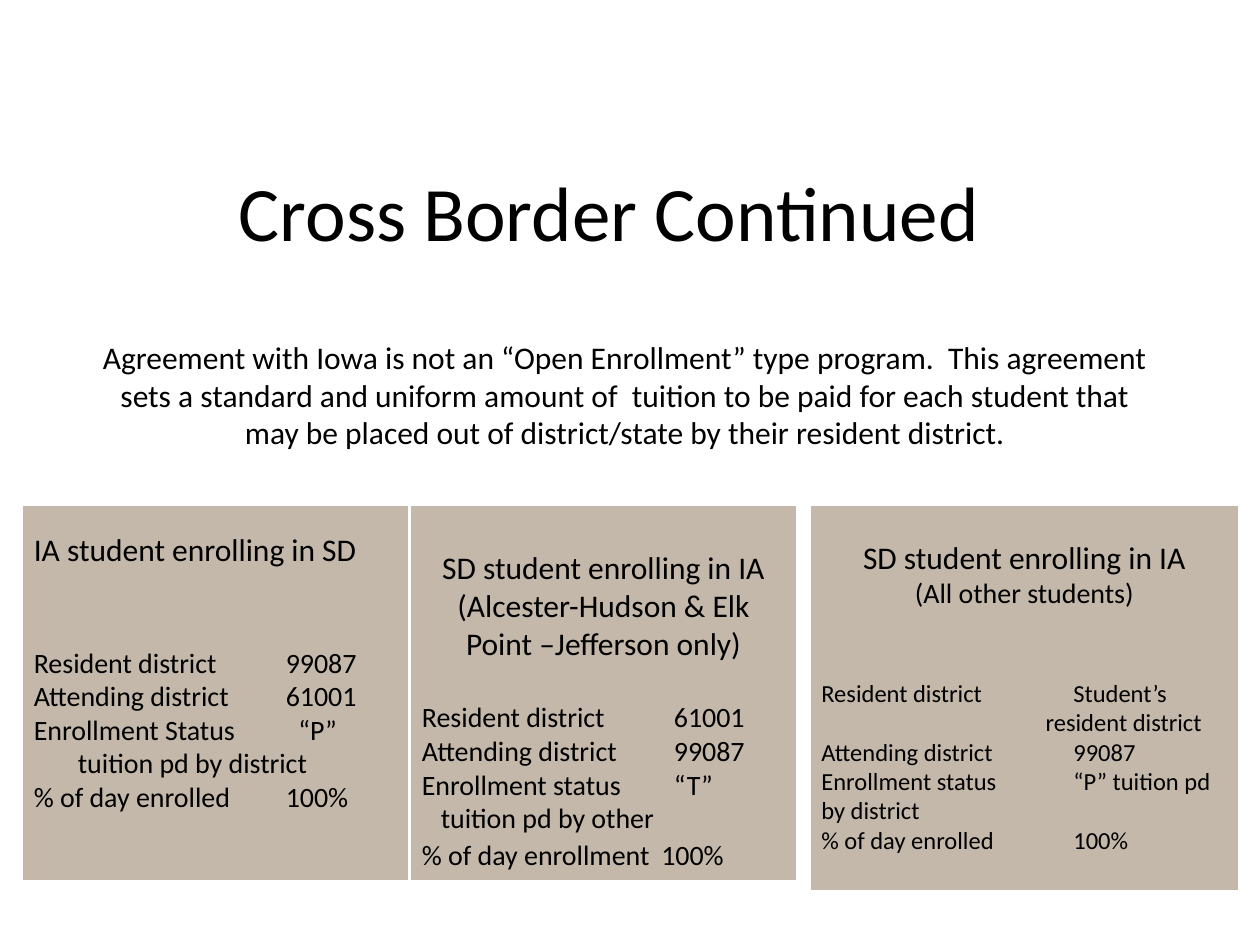
from dataclasses import dataclass

from lxml import etree
from pptx import Presentation
from pptx.dml.color import RGBColor
from pptx.enum import shapes, text
from pptx.oxml import ns
from pptx.util import Inches, Pt


@dataclass(frozen=True)
class Theme:
    font: str = "Calibri"
    ink: RGBColor = RGBColor(0x00, 0x00, 0x00)
    paper: RGBColor = RGBColor(0xFF, 0xFF, 0xFF)
    panel: RGBColor = RGBColor(0xC3, 0xB8, 0xA9)
    title: int = 44
    body: int = 18
    detail: int = 16
    small: int = 14
    border: int = 2


THEME = Theme()
CENTER = text.PP_ALIGN.CENTER
LEFT = text.PP_ALIGN.LEFT


def add_box(s, left, top, width, height, fill, margin_top=None):
    sp = s.shapes.add_shape(
        shapes.MSO_SHAPE.RECTANGLE,
        Inches(left), Inches(top), Inches(width), Inches(height),
    )
    sp.shadow.inherit = False
    sp.fill.solid()
    sp.fill.fore_color.rgb = fill
    sp.line.color.rgb = THEME.paper
    sp.line.width = Pt(THEME.border)
    tf = sp.text_frame
    tf.word_wrap = True
    tf.vertical_anchor = text.MSO_ANCHOR.MIDDLE
    if margin_top is not None:
        tf.vertical_anchor = text.MSO_ANCHOR.TOP
        tf.margin_top = Inches(margin_top)
    return tf


def add_text(tf, content, size=THEME.body, align=LEFT, before=0, indent=0, tab=None):
    p = tf.paragraphs[0]
    if p.runs:
        p = tf.add_paragraph()
    p.alignment = align
    pPr = p._p.get_or_add_pPr()
    if indent:
        pPr.set("marL", str(Inches(indent)))
        pPr.set("indent", "0")
    if tab:
        tabs = etree.SubElement(pPr, ns.qn("a:tabLst"))
        etree.SubElement(tabs, ns.qn("a:tab"), pos=str(Inches(tab)), algn="l")
    if before:
        p.space_before = Pt(before)
    r = p.add_run()
    r.text = content
    r.font.name = THEME.font
    r.font.size = Pt(size)
    r.font.color.rgb = THEME.ink


def add_row(tf, label, value, size=THEME.detail, before=0, tab=2):
    add_text(tf, f"{label}\t{value}", size=size, before=before, tab=tab)


def add_iowa_to_dakota(s):
    tf = add_box(s, 0.17, 4, 3.08, 3, THEME.panel, margin_top=0.21)
    add_text(tf, "IA student enrolling in SD")
    add_row(tf, "Resident district", "99087", before=44)
    add_row(tf, "Attending district", "61001")
    add_row(tf, "Enrollment Status", "“P”", tab=2.1)
    add_text(tf, "tuition pd by district", size=THEME.detail, indent=0.35)
    add_row(tf, "% of day enrolled", "100%")


def add_named_districts(s):
    tf = add_box(s, 3.25, 4, 3.08, 3, THEME.panel, margin_top=0.35)
    add_text(tf, "SD student enrolling in IA", align=CENTER)
    add_text(tf, "(Alcester-Hudson & Elk Point –Jefferson only)", align=CENTER)
    add_row(tf, "Resident district", "61001", before=22)
    add_row(tf, "Attending district", "99087")
    add_row(tf, "Enrollment status", "“T”")
    add_text(tf, "tuition pd by other", size=THEME.detail, indent=0.15)
    add_row(tf, "% of day enrollment", "100%", before=2, tab=1.9)


def add_other_students(s):
    tf = add_box(s, 6.42, 4, 3.42, 3.08, THEME.panel, margin_top=0.27)
    small = THEME.small
    add_text(tf, "SD student enrolling in IA", align=CENTER)
    add_text(tf, "(All other students)", size=THEME.detail, align=CENTER)
    add_row(tf, "Resident district", "Student’s", size=small, before=39)
    add_text(tf, "resident district", size=small, indent=1.78)
    add_row(tf, "Attending district", "99087", size=small)
    add_row(tf, "Enrollment status", "“P” tuition pd", size=small)
    add_text(tf, "by district", size=small)
    add_row(tf, "% of day enrolled", "100%", size=small)


def main():
    prs = Presentation()
    prs.slide_width, prs.slide_height = Inches(10), Inches(7.5)
    s = prs.slides.add_slide(prs.slide_layouts[6])

    tf = add_box(s, 1.42, 1.17, 6.83, 1, THEME.paper)
    add_text(tf, "Cross Border Continued", size=THEME.title, align=CENTER)
    tf = add_box(s, 0.67, 2.42, 8.58, 1.42, THEME.paper)
    add_text(
        tf,
        "Agreement with Iowa is not an “Open Enrollment” type program.  "
        "This agreement sets a standard and uniform amount of  tuition to be "
        "paid for each student that may be placed out of district/state by "
        "their resident district.",
        align=CENTER,
    )

    add_iowa_to_dakota(s)
    add_named_districts(s)
    add_other_students(s)
    prs.save("out.pptx")


if __name__ == "__main__":
    main()
